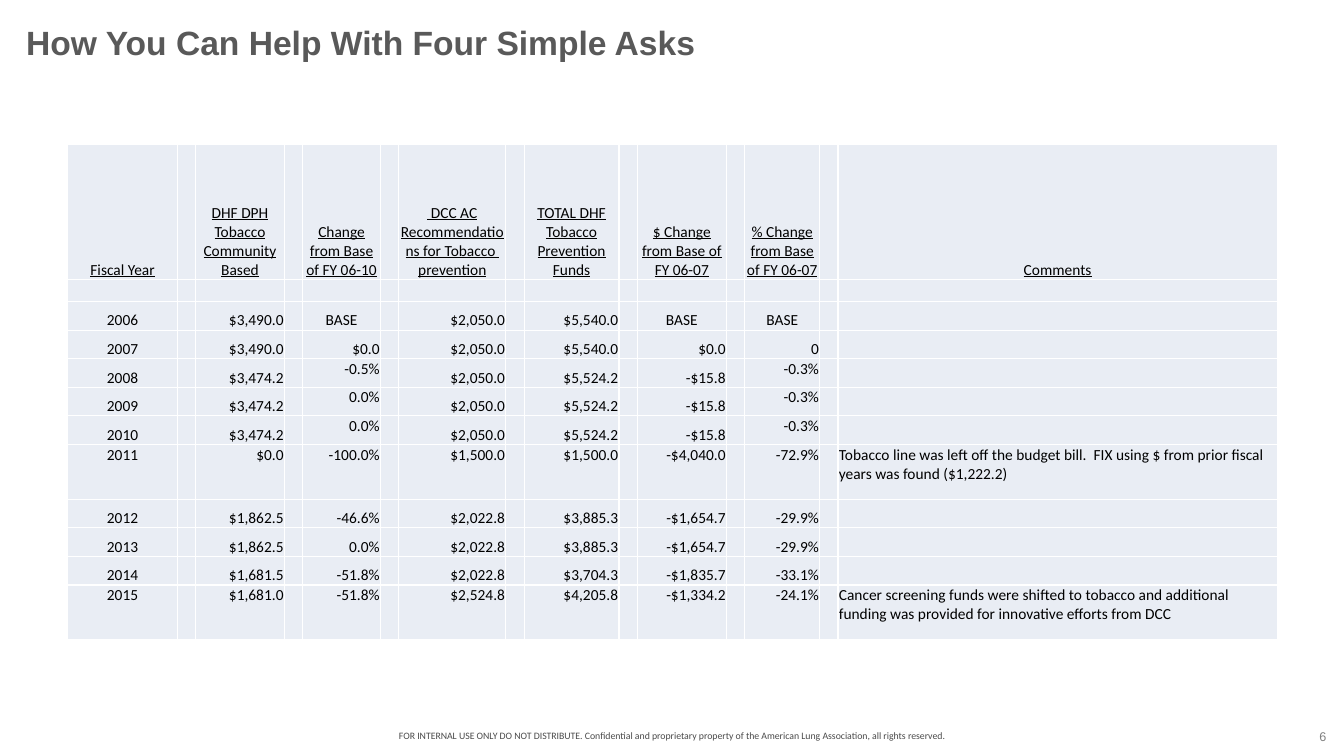
from dataclasses import dataclass

from lxml import etree
from pptx import Presentation
from pptx.dml.color import RGBColor
from pptx.enum.text import MSO_ANCHOR as Anchor, PP_ALIGN as Align
from pptx.oxml.ns import qn
from pptx.util import Cm, Pt

COLORS = {
    "title": "595959",
    "footer": "4A4A4A",
    "number": "808080",
    "text": "000000",
    "cell": "E9EDF4",
    "border": "FFFFFF",
}


@dataclass
class Box:
    left: float
    top: float
    width: float
    height: float
    insets: tuple[float, float, float, float]
    anchor: Anchor


@dataclass
class Column:
    heading: str
    width: float


@dataclass
class FiscalYear:
    values: tuple[str, ...]
    comment: str = ""
    raised: tuple[int, ...] = ()  # data columns set at the top of the cell


COLUMNS = [
    Column("Fiscal Year", 2.76),
    Column("DHF DPH Tobacco Community Based", 2.24),
    Column("Change from Base of FY 06-10", 1.96),
    Column(" DCC AC Recommendations for Tobacco  prevention", 2.7),
    Column("TOTAL DHF Tobacco Prevention Funds", 2.39),
    Column("$ Change from Base of FY 06-07", 2.25),
    Column("% Change from Base of FY 06-07", 1.89),
    Column("Comments", 11.07),
]
ALL = tuple(range(len(COLUMNS)))
PERCENTS = (2, 6)

YEARS = [
    FiscalYear(("2006", "$3,490.0", "BASE", "$2,050.0", "$5,540.0", "BASE", "BASE")),
    FiscalYear(("2007", "$3,490.0", "$0.0", "$2,050.0", "$5,540.0", "$0.0", "0")),
    FiscalYear(("2008", "$3,474.2", "-0.5%", "$2,050.0", "$5,524.2", "-$15.8", "-0.3%"),
               raised=PERCENTS),
    FiscalYear(("2009", "$3,474.2", "0.0%", "$2,050.0", "$5,524.2", "-$15.8", "-0.3%"),
               raised=PERCENTS),
    FiscalYear(("2010", "$3,474.2", "0.0%", "$2,050.0", "$5,524.2", "-$15.8", "-0.3%"),
               raised=PERCENTS),
    FiscalYear(("2011", "$0.0", "-100.0%", "$1,500.0", "$1,500.0", "-$4,040.0", "-72.9%"),
               "Tobacco line was left off the budget bill.  FIX using $ from prior "
               "fiscal years was found ($1,222.2)", ALL),
    FiscalYear(("2012", "$1,862.5", "-46.6%", "$2,022.8", "$3,885.3", "-$1,654.7", "-29.9%")),
    FiscalYear(("2013", "$1,862.5", "0.0%", "$2,022.8", "$3,885.3", "-$1,654.7", "-29.9%")),
    FiscalYear(("2014", "$1,681.5", "-51.8%", "$2,022.8", "$3,704.3", "-$1,835.7", "-33.1%")),
    FiscalYear(("2015", "$1,681.0", "-51.8%", "$2,524.8", "$4,205.8", "-$1,334.2", "-24.1%"),
               "Cancer screening funds were shifted to tobacco and additional funding "
               "was provided for innovative efforts from DCC", ALL),
]
HEADING_HEIGHT, SPACER_HEIGHT, YEAR_HEIGHT, COMMENT_HEIGHT = 3.4, 0.56, 0.72, 1.38
GAP_WIDTH = 0.46


def write(tf, text: str, *, size: float, color: str, font: str = "Calibri",
          bold: bool = False, underline: bool = False, align: Align = Align.LEFT) -> None:
    p = tf.paragraphs[0]
    p.alignment = align
    r = p.add_run()
    r.text = text
    f = r.font
    f.name, f.size, f.bold, f.underline = font, Pt(size), bold, underline
    f.color.rgb = RGBColor.from_string(COLORS[color])


def add_text(s, box: Box, text: str, **fmt) -> None:
    sp = s.shapes.add_textbox(Cm(box.left), Cm(box.top), Cm(box.width), Cm(box.height))
    tf = sp.text_frame
    tf.word_wrap = True
    tf.vertical_anchor = box.anchor
    tf.margin_left, tf.margin_top, tf.margin_right, tf.margin_bottom = map(Cm, box.insets)
    write(tf, text, **fmt)


def style_cell(cell) -> None:
    cell.margin_left = cell.margin_top = cell.margin_right = Cm(0.02)
    cell.margin_bottom = 0
    props = cell._tc.get_or_add_tcPr()
    for side in ("lnL", "lnR", "lnT", "lnB"):
        line = etree.SubElement(props, qn(f"a:{side}"), w=str(Pt(1)))
        paint = etree.SubElement(line, qn("a:solidFill"))
        etree.SubElement(paint, qn("a:srgbClr"), val=COLORS["border"])
    cell.fill.solid()
    cell.fill.fore_color.rgb = RGBColor.from_string(COLORS["cell"])


def fill_cell(cell, text: str, align: Align, anchor: Anchor, underline: bool = False) -> None:
    cell.vertical_anchor = anchor
    write(cell.text_frame, text, size=11, color="text", align=align, underline=underline)


def value_align(column: int, text: str) -> Align:
    if column == len(COLUMNS) - 1:
        return Align.LEFT
    return Align.CENTER if column == 0 or text == "BASE" else Align.RIGHT


def add_funding_table(s) -> None:
    heights = [HEADING_HEIGHT, SPACER_HEIGHT]
    heights += [COMMENT_HEIGHT if year.comment else YEAR_HEIGHT for year in YEARS]
    # A narrow gap column separates each pair of data columns
    widths = [GAP_WIDTH] * (2 * len(COLUMNS) - 1)
    widths[::2] = [column.width for column in COLUMNS]
    table = s.shapes.add_table(len(heights), len(widths), Cm(1.71), Cm(3.64),
                               Cm(sum(widths)), Cm(sum(heights))).table
    table.first_row = table.horz_banding = False
    for row, height in zip(table.rows, heights):
        row.height = Cm(height)
    for column, width in zip(table.columns, widths):
        column.width = Cm(width)
    for cell in table.iter_cells():
        style_cell(cell)

    # Headings
    for c, column in enumerate(COLUMNS):
        fill_cell(table.cell(0, 2 * c), column.heading, Align.CENTER, Anchor.BOTTOM, True)

    # Fiscal years
    for row, year in enumerate(YEARS, start=2):
        for c, text in enumerate((*year.values, year.comment)):
            if text:
                anchor = Anchor.TOP if c in year.raised else Anchor.BOTTOM
                fill_cell(table.cell(row, 2 * c), text, value_align(c, text), anchor)

    # Small type in empty cells keeps the rows at their set height
    for cell in table.iter_cells():
        if not cell.text:
            etree.SubElement(cell.text_frame.paragraphs[0]._p, qn("a:endParaRPr"), sz="1100")


def main() -> None:
    prs = Presentation()
    prs.slide_width, prs.slide_height = Cm(33.87), Cm(19.05)
    s = prs.slides.add_slide(prs.slide_layouts[6])

    # Footer and slide number
    add_text(s, Box(0, 18.06, 33.87, 0.81, (0.25, 0.13, 0.25, 0), Anchor.MIDDLE),
             "FOR INTERNAL USE ONLY DO NOT DISTRIBUTE. Confidential and proprietary "
             "property of the American Lung Association, all rights reserved.",
             size=7, color="footer", align=Align.CENTER)
    add_text(s, Box(32.82, 18.19, 1.04, 0.56, (0, 0, 0, 0), Anchor.BOTTOM), "6",
             size=9, color="number", font="Arial", align=Align.CENTER)

    # Title and table
    add_text(s, Box(0.41, 0.41, 31.37, 1.27, (0.25, 0.13, 0.25, 0.13), Anchor.TOP),
             "How You Can Help With Four Simple Asks",
             size=24, color="title", font="Arial", bold=True)
    add_funding_table(s)
    prs.save("out.pptx")


if __name__ == "__main__":
    main()
